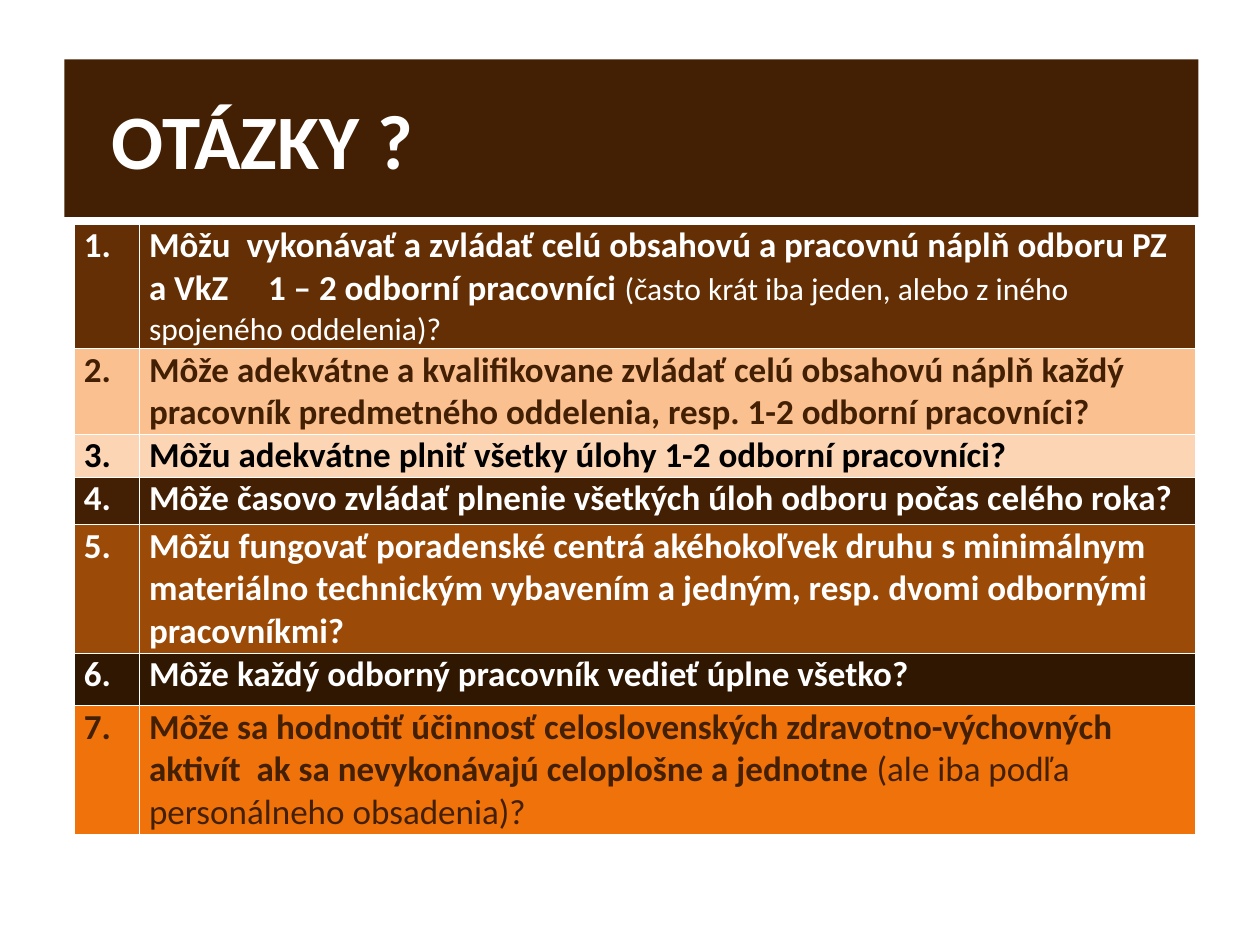
from pptx import Presentation
from pptx.dml.color import RGBColor
from pptx.enum.text import MSO_ANCHOR, PP_ALIGN
from pptx.util import Pt

LEFT = PP_ALIGN.LEFT
MIDDLE = MSO_ANCHOR.MIDDLE
FONT = "Calibri"
TITLE_ONLY = 5

WHITE = RGBColor(0xFF, 0xFF, 0xFF)
BLACK = RGBColor(0x00, 0x00, 0x00)
DARK_BROWN = RGBColor(0x43, 0x20, 0x03)
BROWN = RGBColor(0x64, 0x2F, 0x04)
PEACH = RGBColor(0xFA, 0xC0, 0x90)
PALE_PEACH = RGBColor(0xFC, 0xD5, 0xB5)
RUST = RGBColor(0x9B, 0x4A, 0x07)
DEEP_BROWN = RGBColor(0x30, 0x17, 0x02)
ORANGE = RGBColor(0xF0, 0x72, 0x0A)

NUMBER_WIDTH = 37.3
# height, fill, text colour, bold question, plain remark, remark size
QUESTIONS = [
    (62, BROWN, WHITE,
     "Môžu  vykonávať a zvládať celú obsahovú a pracovnú náplň odboru PZ a VkZ     1 – 2 odborní pracovníci ",
     "(často krát iba jeden, alebo z iného spojeného oddelenia)?", 18),
    (47, PEACH, DARK_BROWN,
     "Môže adekvátne a kvalifikovane zvládať celú obsahovú náplň každý "
     "pracovník predmetného oddelenia, resp. 1-2 odborní pracovníci?", "", 20),
    (22, PALE_PEACH, BLACK,
     "Môžu adekvátne plniť všetky úlohy 1-2 odborní pracovníci?", "", 20),
    (27, DARK_BROWN, WHITE,
     "Môže časovo zvládať plnenie všetkých úloh odboru počas celého roka?", "", 20),
    (62, RUST, WHITE,
     "Môžu fungovať poradenské centrá akéhokoľvek druhu s minimálnym "
     "materiálno technickým vybavením a jedným, resp. dvomi odbornými pracovníkmi?", "", 20),
    (30, DEEP_BROWN, WHITE,
     "Môže každý odborný pracovník vedieť úplne všetko?", "", 20),
    (62, ORANGE, DARK_BROWN,
     "Môže sa hodnotiť účinnosť celoslovenských zdravotno-výchovných "
     "aktivít  ak sa nevykonávajú celoplošne a jednotne ",
     "(ale iba podľa personálneho obsadenia)?", 20),
]


def add_run(p, text, size, color, bold=True):
    r = p.add_run()
    r.text = text
    r.font.name = FONT
    r.font.size = Pt(size)
    r.font.bold = bold
    r.font.color.rgb = color


def add_title(s, x, y, w, h):
    title = s.shapes.title
    title.left, title.top, title.width, title.height = Pt(x), Pt(y), Pt(w), Pt(h)
    title.fill.solid()
    title.fill.fore_color.rgb = DARK_BROWN
    tf = title.text_frame
    tf.vertical_anchor = MIDDLE
    tf.margin_left = Pt(27)
    p = tf.paragraphs[0]
    p.alignment = LEFT
    add_run(p, "OTÁZKY ?", 44, WHITE)


def format_cell(cell, fill):
    cell.fill.solid()
    cell.fill.fore_color.rgb = fill
    cell.margin_left = cell.margin_right = Pt(5.4)
    cell.margin_top = cell.margin_bottom = 0
    return cell.text_frame.paragraphs[0]


def add_questions(s, x, y, w):
    total = sum(q[0] for q in QUESTIONS)
    table = s.shapes.add_table(len(QUESTIONS), 2, Pt(x), Pt(y), Pt(w), Pt(total)).table
    table.horz_banding = False
    table.columns[0].width = Pt(NUMBER_WIDTH)
    table.columns[1].width = Pt(w - NUMBER_WIDTH)
    for i, (height, fill, color, question, remark, size) in enumerate(QUESTIONS):
        table.rows[i].height = Pt(height)
        number = format_cell(table.cell(i, 0), fill)
        add_run(number, f"{i + 1}.", 20, color)
        p = format_cell(table.cell(i, 1), fill)
        add_run(p, question, 20, color)
        if remark:
            add_run(p, remark, size, color, bold=False)


def main():
    prs = Presentation()
    prs.slide_width, prs.slide_height = Pt(720), Pt(540)
    s = prs.slides.add_slide(prs.slide_layouts[TITLE_ONLY])
    add_title(s, 36.8, 34, 648, 90)
    add_questions(s, 42.5, 128.3, 640.6)
    prs.save("out.pptx")


if __name__ == "__main__":
    main()
